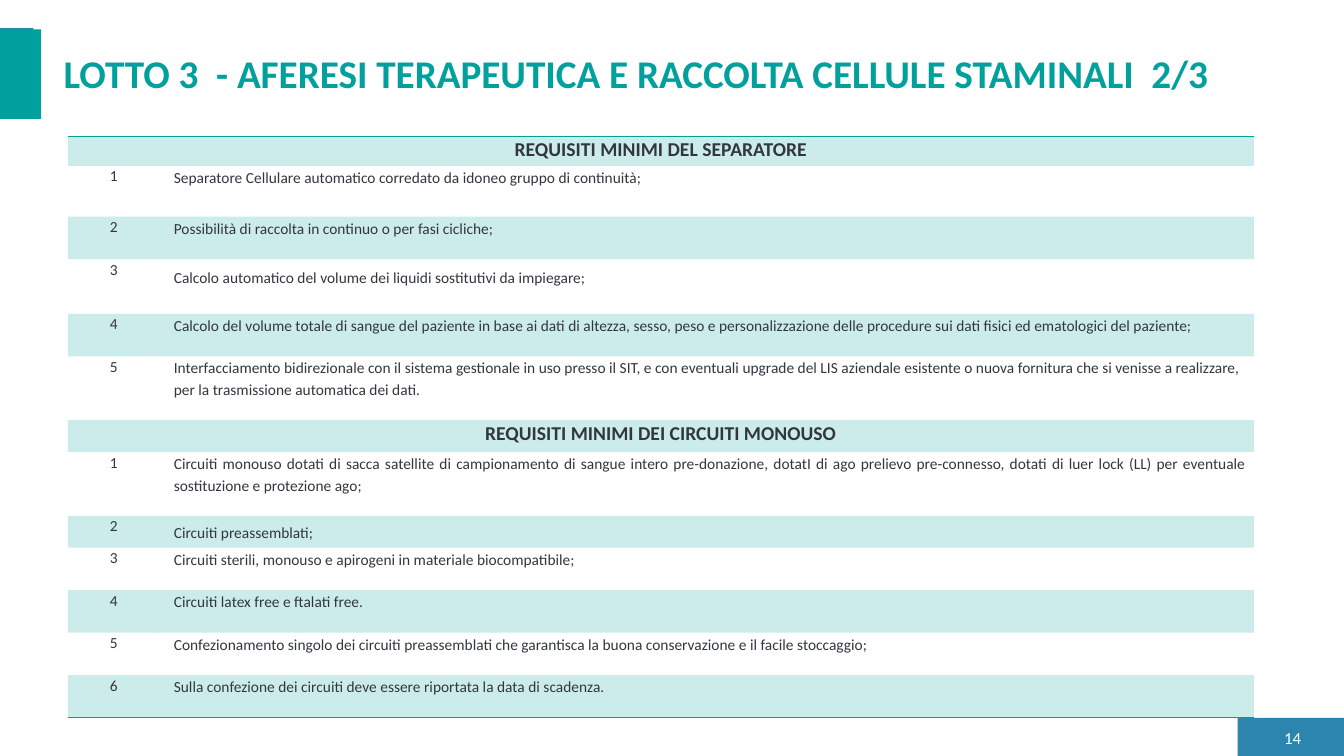
from lxml import etree
from pptx import Presentation
from pptx.dml.color import RGBColor
from pptx.enum.shapes import MSO_SHAPE
from pptx.enum.text import MSO_ANCHOR, MSO_AUTO_SIZE, PP_ALIGN
from pptx.oxml.ns import qn
from pptx.util import Cm, Pt

LEFT, CENTER, RIGHT, JUSTIFY = PP_ALIGN.LEFT, PP_ALIGN.CENTER, PP_ALIGN.RIGHT, PP_ALIGN.JUSTIFY
TOP, MIDDLE = MSO_ANCHOR.TOP, MSO_ANCHOR.MIDDLE
TEAL = RGBColor(0x00, 0xA0, 0x9D)
BLUE = RGBColor(0x2C, 0x85, 0xAE)
DARK = RGBColor(0x32, 0x36, 0x3F)
WHITE = RGBColor(0xFF, 0xFF, 0xFF)
FONT = "Calibri"
PLAIN_TABLE = "{2D5ABB26-0587-4C30-8999-92F81FD0307C}"
TITLE_ONLY = 5


def write_text(frame, text, size=11, color=DARK, bold=False, align=LEFT,
               anchor=MIDDLE, spacing=1.0, indent=0):
    frame.word_wrap = True
    frame.vertical_anchor = anchor
    paragraph = frame.paragraphs[0]
    paragraph.alignment = align
    paragraph.line_spacing = spacing
    if indent:
        paragraph._p.get_or_add_pPr().set("marL", str(Cm(indent)))
    run = paragraph.add_run()
    run.text = text
    run.font.name = FONT
    run.font.size = Pt(size)
    run.font.bold = bold
    run.font.color.rgb = color


def add_border(cell, side):
    line = etree.Element(qn(f"a:{side}"), w=str(Pt(1)))
    fill = etree.SubElement(line, qn("a:solidFill"))
    etree.SubElement(fill, qn("a:srgbClr"), val=str(TEAL))
    cell._tc.get_or_add_tcPr().insert(0, line)


presentation = Presentation()
presentation.slide_width = Cm(33.87)
presentation.slide_height = Cm(19.05)
slide = presentation.slides.add_slide(presentation.slide_layouts[TITLE_ONLY])

# Title
title = slide.shapes.title
title.left, title.top, title.width, title.height = Cm(1.35), Cm(1.12), Cm(31.27), Cm(1.45)
write_text(title.text_frame, "LOTTO 3  - AFERESI TERAPEUTICA E RACCOLTA CELLULE STAMINALI  2/3",
           size=28, color=TEAL, bold=True)
title.text_frame.auto_size = MSO_AUTO_SIZE.SHAPE_TO_FIT_TEXT

# Coloured blocks at the edges
for left, top, width, height, color in [
    (31.19, 18.09, 2.68, 0.96, BLUE),
    (0, 0.71, 0.84, 2.11, BLUE),
    (0, 0.74, 1.04, 2.26, TEAL),
]:
    block = slide.shapes.add_shape(MSO_SHAPE.RECTANGLE, Cm(left), Cm(top), Cm(width), Cm(height))
    block.shadow.inherit = False
    block.fill.solid()
    block.fill.fore_color.rgb = color
    block.line.fill.background()

# Page number
page_number = slide.shapes.add_textbox(Cm(32), Cm(18.29), Cm(1.04), Cm(0.58))
write_text(page_number.text_frame, "14", size=12, color=WHITE, align=RIGHT)

# Sections: heading, heading height, alignment, rows of (text, height, top margin)
sections = [
    ("REQUISITI MINIMI DEL SEPARATORE", 0.74, LEFT, [
        ("Separatore Cellulare automatico corredato da idoneo gruppo di continuità;", 1.28, 0),
        ("Possibilità di raccolta in continuo o per fasi cicliche;", 1.07, 0),
        ("Calcolo automatico del volume dei liquidi sostitutivi da impiegare;", 1.38, 0.16),
        ("Calcolo del volume totale di sangue del paziente in base ai dati di altezza, sesso, peso e "
         "personalizzazione delle procedure sui dati fisici ed ematologici del paziente;", 1.07, 0),
        ("Interfacciamento bidirezionale con il sistema gestionale in uso presso il SIT, e con "
         "eventuali upgrade del LIS aziendale esistente o nuova fornitura che si venisse a "
         "realizzare, per la trasmissione automatica dei dati.", 1.61, 0),
    ]),
    ("REQUISITI MINIMI DEI CIRCUITI MONOUSO", 0.8, JUSTIFY, [
        ("Circuiti monouso dotati di sacca satellite di campionamento di sangue intero "
         "pre-donazione, dotatI di ago prelievo pre-connesso, dotati di luer lock (LL) per "
         "eventuale sostituzione e protezione ago;", 1.61, 0),
        ("Circuiti preassemblati;", 0.8, 0.13),
        ("Circuiti sterili, monouso e apirogeni in materiale biocompatibile;", 1.07, 0),
        ("Circuiti latex free e ftalati free.", 1.07, 0),
        ("Confezionamento singolo dei circuiti preassemblati che garantisca la buona "
         "conservazione e il facile stoccaggio;", 1.07, 0),
        ("Sulla confezione dei circuiti deve essere riportata la data di scadenza.", 1.07, 0),
    ]),
]

# Requirements table
row_count = sum(1 + len(items) for _, _, _, items in sections)
table_frame = slide.shapes.add_table(row_count, 2, Cm(1.71), Cm(3.44), Cm(29.89), Cm(14.64))
table = table_frame.table
table.first_row = table.horz_banding = False
next(table_frame.element.iter(qn("a:tableStyleId"))).text = PLAIN_TABLE
table.columns[0].width, table.columns[1].width = Cm(2.31), Cm(27.58)
for cell in table.iter_cells():
    cell.margin_left = cell.margin_right = Cm(0.18)
    cell.margin_top = cell.margin_bottom = 0

row = 0
for heading, heading_height, align, items in sections:
    table.rows[row].height = Cm(heading_height)
    heading_cell = table.cell(row, 0)
    heading_cell.merge(table.cell(row, 1))
    write_text(heading_cell.text_frame, heading, size=14, bold=True, align=CENTER, spacing=1.07)
    shaded_rows = [row]
    for number, (text, height, margin) in enumerate(items, start=1):
        row += 1
        table.rows[row].height = Cm(height)
        number_cell, text_cell = table.cell(row, 0), table.cell(row, 1)
        write_text(number_cell.text_frame, str(number), align=CENTER, spacing=1.07)
        write_text(text_cell.text_frame, text, align=align, anchor=TOP, spacing=1.15, indent=0.18)
        text_cell.margin_top = Cm(margin)
        if number % 2 == 0:
            shaded_rows.append(row)
    row += 1

    # Translucent teal on headings and even rows
    for shaded_row in shaded_rows:
        for cell in table.rows[shaded_row].cells:
            cell.fill.solid()
            cell.fill.fore_color.rgb = TEAL
            tint = next(cell._tc.tcPr.iter(qn("a:srgbClr")))
            etree.SubElement(tint, qn("a:alpha"), val="20000")

# Rules above and below the table
for column in range(2):
    add_border(table.cell(0, column), "lnT")
    add_border(table.cell(row_count - 1, column), "lnB")

presentation.save("out.pptx")
